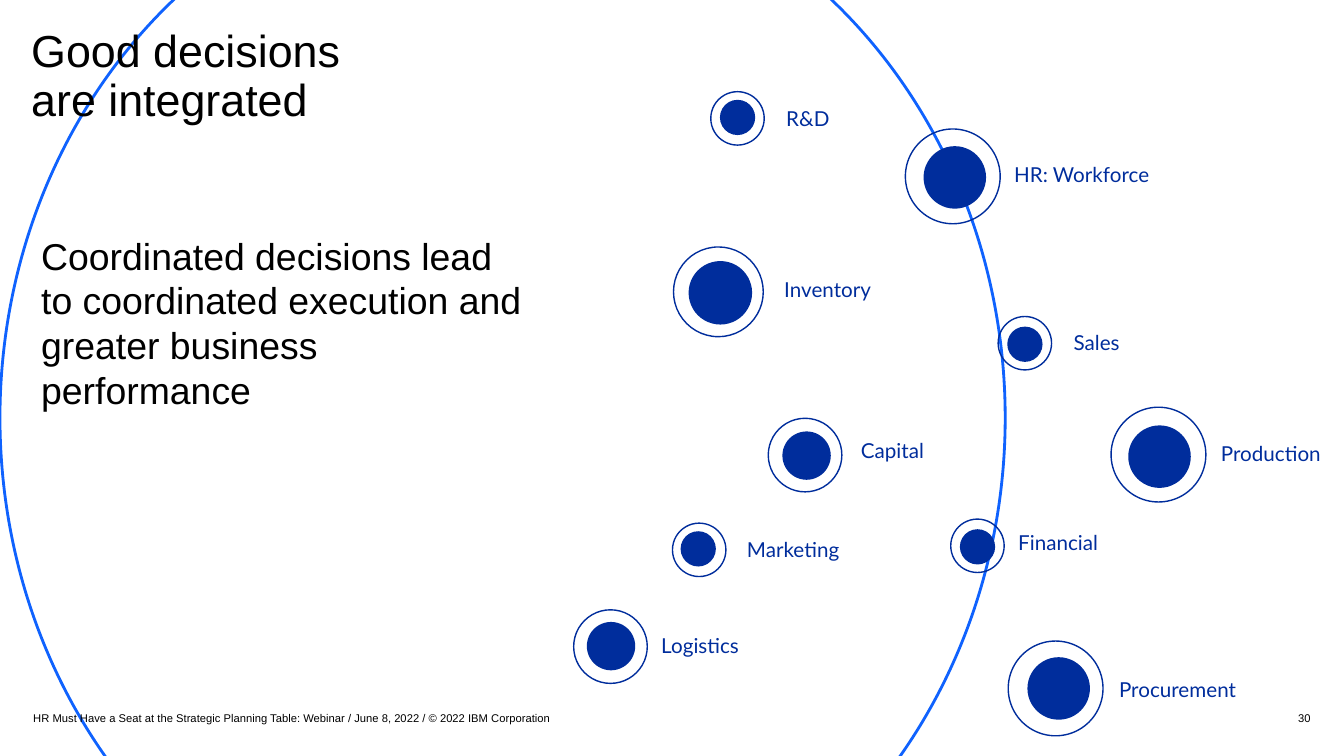
from typing import NamedTuple

from pptx import Presentation
from pptx.dml.color import RGBColor
from pptx.enum.shapes import MSO_SHAPE
from pptx.enum.text import MSO_ANCHOR, PP_ALIGN
from pptx.util import Inches, Pt

BLACK = RGBColor(0x00, 0x00, 0x00)
BRIGHT_BLUE = RGBColor(0x0F, 0x62, 0xFE)
DEEP_BLUE = RGBColor(0x00, 0x2D, 0x9C)
WHITE = RGBColor(0xFF, 0xFF, 0xFF)

TITLE_FONT = {"name": "Arial", "size": Pt(32)}
BODY_FONT = {"name": "Arial", "size": Pt(26.7)}
FOOTER_FONT = {"name": "Arial", "size": Pt(8)}
LABEL_FONT = {"name": "Lato", "size": Pt(14.7)}
NO_INSETS = {"margin_left": 0, "margin_top": 0, "margin_right": 0, "margin_bottom": 0}
FOOTER_FRAME = {**NO_INSETS, "vertical_anchor": MSO_ANCHOR.MIDDLE}

LABEL_HEIGHT = 0.35
DOT_SIZES = {0.53: 0.35, 0.73: 0.48, 0.89: 0.63, 0.94: 0.62}  # ring size: dot size


class Function(NamedTuple):
    """A business function; dot and label are offsets from the ring's corner."""
    name: str
    ring: tuple
    size: float
    dot: tuple
    label: tuple
    label_width: float


FUNCTIONS = [
    Function("Inventory", (6.68, 2.45), 0.89, (0.15, 0.14), (1.00, 0.25), 3.26),
    Function("Sales", (9.90, 3.14), 0.53, (0.09, 0.10), (0.65, 0.08), 2.10),
    Function("Financial", (9.43, 5.15), 0.53, (0.09, 0.10), (0.57, 0.06), 2.21),
    Function("Production", (11.02, 4.04), 0.94, (0.17, 0.18), (0.99, 0.28), 2.41),
    Function("Procurement", (10.00, 6.36), 0.94, (0.19, 0.16), (1.00, 0.31), 3.08),
    Function("Capital", (7.62, 4.15), 0.73, (0.14, 0.13), (0.82, 0.15), 1.53),
    Function("Logistics", (5.69, 6.05), 0.73, (0.13, 0.12), (0.77, 0.18), 2.21),
    Function("HR: Workforce", (8.98, 1.28), 0.94, (0.18, 0.17), (0.98, 0.28), 2.10),
    Function("R&D", (7.05, 0.91), 0.53, (0.09, 0.08), (0.65, 0.09), 1.86),
    Function("Marketing", (6.67, 5.19), 0.53, (0.08, 0.08), (0.64, 0.09), 1.86),
]


def set_values(target, values):
    for name, value in values.items():
        setattr(target, name, value)


def add_text(shapes, box, text, font, color=BLACK, frame_format=None, para_format=None):
    frame = shapes.add_textbox(*map(Inches, box)).text_frame
    set_values(frame, {"word_wrap": True, **(frame_format or {})})
    para = frame.paragraphs[0]
    set_values(para, para_format or {})
    span = para.add_run()
    span.text = text
    set_values(span.font, font)
    span.font.color.rgb = color


def add_ellipse(shapes, box, fill=None, line=None, line_width=1):
    ellipse = shapes.add_shape(MSO_SHAPE.OVAL, *map(Inches, box))
    ellipse.shadow.inherit = False
    if fill is None:
        ellipse.fill.background()
    else:
        ellipse.fill.solid()
        ellipse.fill.fore_color.rgb = fill
    if line is None:
        ellipse.line.fill.background()
    else:
        ellipse.line.color.rgb = line
        ellipse.line.width = Pt(line_width)


def add_message(page, left, top):
    """Place the title and, below it, the statement."""
    add_text(page.shapes, (left, top, 3.74, 1.17), "Good decisions are integrated",
             TITLE_FONT, frame_format=NO_INSETS, para_format={"line_spacing": 0.9})
    add_text(page.shapes, (left, top + 1.97, 4.98, 1.9),
             "Coordinated decisions lead to coordinated execution and "
             "greater business performance", BODY_FONT)


def add_function(page, function):
    """Group a ring, its dot and its label."""
    left, top = function.ring
    dot_size = DOT_SIZES[function.size]
    dot_left, dot_top = function.dot
    label_left, label_top = function.label
    shapes = page.shapes.add_group_shape().shapes
    add_ellipse(shapes, (left + dot_left, top + dot_top, dot_size, dot_size),
                fill=DEEP_BLUE)
    add_ellipse(shapes, (left, top, function.size, function.size), line=DEEP_BLUE)
    add_text(shapes, (left + label_left, top + label_top, function.label_width,
                      LABEL_HEIGHT), function.name, LABEL_FONT, DEEP_BLUE)


def add_footer(page, left, top, width, height):
    number_width = 2.67
    add_text(page.shapes, (left, top, 6, height),
             "HR Must Have a Seat at the Strategic Planning Table: Webinar / "
             "June 8, 2022 / © 2022 IBM Corporation",
             FOOTER_FONT, frame_format=FOOTER_FRAME)
    add_text(page.shapes, (left + width - number_width, top, number_width, height), "30",
             FOOTER_FONT, frame_format=FOOTER_FRAME,
             para_format={"alignment": PP_ALIGN.RIGHT, "space_after": Pt(8)})


def main():
    deck = Presentation()
    deck.slide_width, deck.slide_height = Inches(13.33), Inches(7.5)
    page = deck.slides.add_slide(deck.slide_layouts[6])
    page.background.fill.solid()
    page.background.fill.fore_color.rgb = WHITE
    add_ellipse(page.shapes, (0, -1.34, 9.97, 10.97), line=BRIGHT_BLUE, line_width=2)
    add_message(page, 0.31, 0.29)
    for function in FUNCTIONS:
        add_function(page, function)
    add_footer(page, 0.33, 7, 12.67, 0.24)
    deck.save("out.pptx")


if __name__ == "__main__":
    main()
